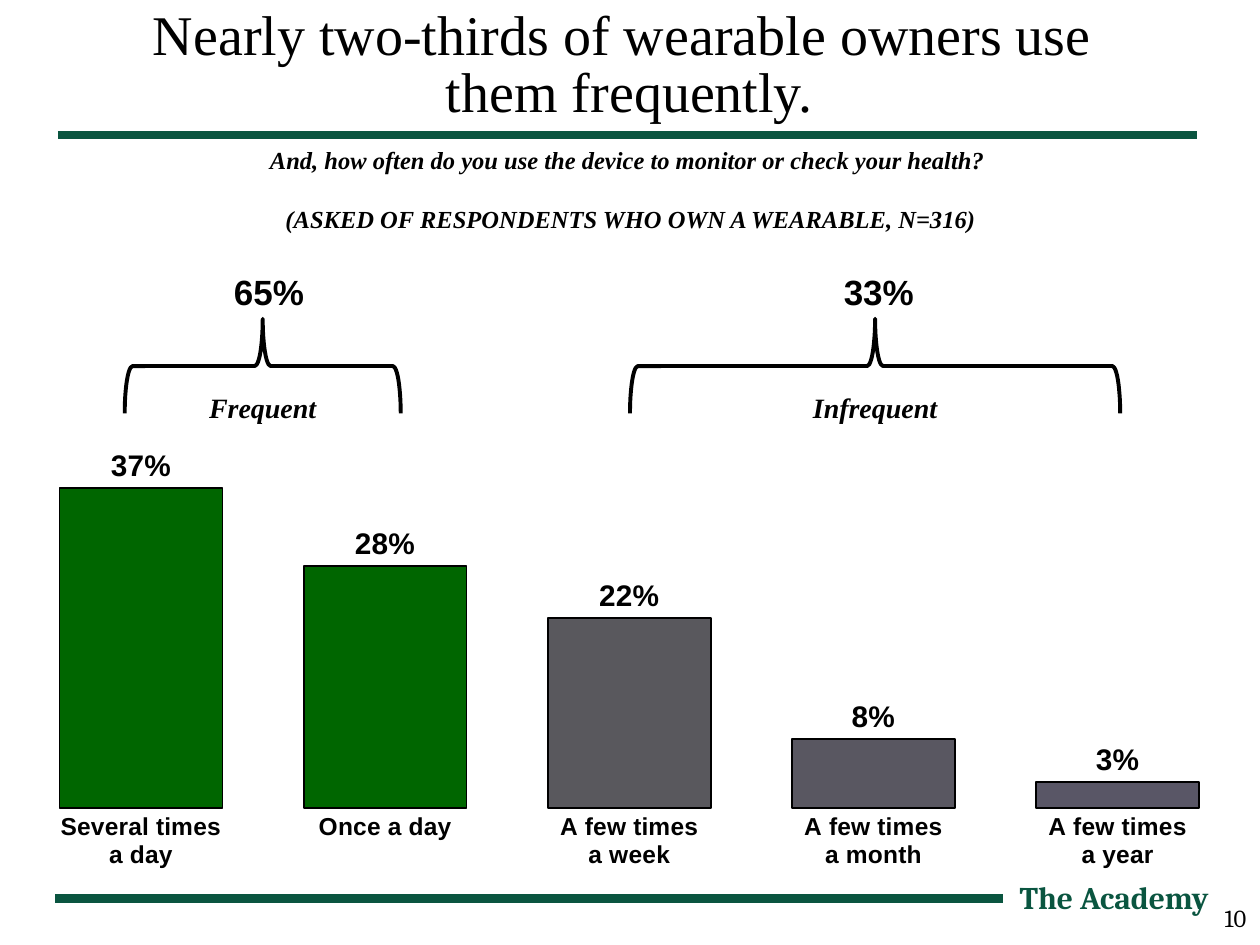
import pptx
import pptx.chart.data
import pptx.dml.color
import pptx.enum.chart
import pptx.enum.shapes
import pptx.enum.text
import pptx.oxml
import pptx.oxml.ns
import pptx.util

PX = 9144  # EMU per px, at 100 px to the inch
RGB = pptx.dml.color.RGBColor
BLACK = RGB(0x00, 0x00, 0x00)
WHITE = RGB(0xFF, 0xFF, 0xFF)
ACADEMY_GREEN = RGB(0x0A, 0x55, 0x40)
FREQUENT_GREEN = RGB(0x00, 0x66, 0x00)
WEEK_GREY = RGB(0x59, 0x58, 0x5D)
MONTH_GREY = RGB(0x59, 0x57, 0x61)
YEAR_GREY = RGB(0x59, 0x56, 0x66)

ALIGN = pptx.enum.text.PP_ALIGN
ANCHOR = pptx.enum.text.MSO_ANCHOR
SHAPE = pptx.enum.shapes.MSO_SHAPE
CHART = pptx.enum.chart

SERIF = "Times New Roman"
QUESTION = {"name": SERIF, "size": 14, "bold": True, "italic": True}
GROUP = {"name": SERIF, "size": 16, "bold": True, "italic": True}
TOTAL = {"name": "Arial", "size": 20, "bold": True}

USAGE = [
    ("Several times\na day", 0.37, FREQUENT_GREEN),
    ("Once a day", 0.28, FREQUENT_GREEN),
    ("A few times\na week", 0.22, WEEK_GREY),
    ("A few times\na month", 0.08, MONTH_GREY),
    ("A few times\na year", 0.03, YEAR_GREY),
]


def emu(*lengths):
    return [pptx.util.Emu(round(length * PX)) for length in lengths]


def set_font(font, formats, color=BLACK):
    for attribute, value in formats.items():
        setattr(font, attribute, pptx.util.Pt(value) if attribute == "size" else value)
    font.color.rgb = color


def write(frame, lines, formats, color=BLACK, align=ALIGN.CENTER, **spacing):
    """Fill a text frame, one paragraph a line, with the spacing after the first."""
    frame.word_wrap = True
    frame.auto_size = pptx.enum.text.MSO_AUTO_SIZE.NONE
    frame.vertical_anchor = ANCHOR.TOP
    for index, line in enumerate(lines):
        paragraph = frame.add_paragraph() if index else frame.paragraphs[0]
        paragraph.alignment = align
        for attribute, value in spacing.items():
            if index or attribute != "space_before":
                setattr(paragraph, attribute, value)
        run = paragraph.add_run()
        run.text = line
        set_font(run.font, formats, color)


def add_text(slide, box, lines, formats, **options):
    write(slide.shapes.add_textbox(*emu(*box)).text_frame, lines, formats, **options)


def add_rule(slide, left, right, y, weight):
    rule = slide.shapes.add_connector(
        pptx.enum.shapes.MSO_CONNECTOR.STRAIGHT, *emu(left, y, right, y))
    rule.line.color.rgb = ACADEMY_GREEN
    rule.line.width = pptx.util.Pt(weight)
    pptx.oxml.ns.qn("a:effectLst")
    rule._element.spPr.append(pptx.oxml.parse_xml(
        "<a:effectLst %s/>" % pptx.oxml.ns.nsdecls("a")))


def add_heading(slide, left, top, width):
    title = slide.shapes.title
    title.left, title.top, title.width, title.height = emu(left, top, width, 56)
    write(title.text_frame,
          ["Nearly two-thirds of wearable owners use ", "them frequently."],
          {"name": SERIF, "size": 32}, line_spacing=0.85)
    add_rule(slide, left + 16, left + 920, top + 104, 4.5)
    add_text(slide, (left + 20, top + 107, 901, 104),
             ["And, how often do you use the device to monitor or check your health? ",
              "(ASKED OF RESPONDENTS WHO OWN A WEARABLE, N=316)"],
             QUESTION, space_before=pptx.util.Pt(17))


def add_usage_chart(slide, box):
    labels, shares, colors = zip(*USAGE)
    chart_data = pptx.chart.data.CategoryChartData(number_format="0%")
    chart_data.categories = labels
    chart_data.add_series("Series 1", shares)
    chart = slide.shapes.add_chart(
        CHART.XL_CHART_TYPE.COLUMN_CLUSTERED, *emu(*box), chart_data).chart
    chart.has_legend = chart.has_title = False
    set_font(chart.font, {"name": "Arial", "size": 18})

    frequency, share = chart.category_axis, chart.value_axis
    for axis in (frequency, share):
        axis.major_tick_mark = axis.minor_tick_mark = CHART.XL_TICK_MARK.NONE
        axis.has_major_gridlines = False
        axis.format.line.fill.background()
    set_font(frequency.tick_labels.font, {"name": "Arial", "size": 14, "bold": True})
    share.tick_label_position = CHART.XL_TICK_LABEL_POSITION.NONE
    share.minimum_scale, share.maximum_scale, share.major_unit = 0, 0.5, 0.1

    plot = chart.plots[0]
    plot.gap_width = 50
    plot.vary_by_categories = False
    plot.has_data_labels = True
    values = plot.data_labels
    values.show_value = True
    values.number_format, values.number_format_is_linked = "0%", False
    values.position = CHART.XL_LABEL_POSITION.OUTSIDE_END
    set_font(values.font, {"name": "Arial", "size": 17, "bold": True})
    for index, color in enumerate(colors):
        bar = plot.series[0].points[index].format
        bar.fill.solid()
        bar.fill.fore_color.rgb = color
        bar.line.color.rgb = BLACK
        bar.line.width = pptx.util.Pt(1)
    place_plot(chart, x=0.015, y=0.236, w=0.969, h=0.622)


def place_plot(chart, **fractions):
    sizes = "".join(f'<c:{side} val="{value}"/>' for side, value in fractions.items())
    layout = pptx.oxml.parse_xml(
        f'<c:layout {pptx.oxml.ns.nsdecls("c")}><c:manualLayout>'
        '<c:layoutTarget val="inner"/><c:xMode val="edge"/><c:yMode val="edge"/>'
        f'{sizes}</c:manualLayout></c:layout>')
    area = chart._chartSpace.chart.plotArea
    for automatic in area.findall(pptx.oxml.ns.qn("c:layout")):
        area.remove(automatic)
    area.insert(0, layout)


def add_group(slide, left, top, width, total, name, total_shift):
    """Brace over a group of bars, with its total above and its name below."""
    center, depth = left + width / 2, 75
    # The brace is turned a quarter, so its box is given before turning.
    brace = slide.shapes.add_shape(SHAPE.LEFT_BRACE, *emu(
        center - depth / 2, top + 43 + (depth - width) / 2, depth, width))
    brace.rotation = 90
    brace.shadow.inherit = False
    brace.fill.background()
    brace.line.color.rgb = BLACK
    brace.line.width = pptx.util.Pt(2.25)
    add_text(slide, (center + total_shift - 67, top, 134, 44), [total], TOTAL)
    add_text(slide, (center - 82, top + 95, 164, 37), [name], GROUP)


def add_footer(slide, left, top, width):
    add_rule(slide, left, left + 752, top + 21, 5)
    add_text(slide, (left + 743, top, 182, 40), ["The Academy"],
             {"name": "Cambria", "size": 18, "bold": True},
             color=ACADEMY_GREEN, align=ALIGN.RIGHT)
    add_text(slide, (left + width - 100, top + 20, 100, 34), ["10"],
             {"name": "Cambria", "size": 14}, align=ALIGN.RIGHT)


def main():
    deck = pptx.Presentation()
    deck.slide_width, deck.slide_height = emu(1000, 750)
    slide = deck.slides.add_slide(deck.slide_layouts.get_by_name("Title Only"))
    slide.background.fill.solid()
    slide.background.fill.fore_color.rgb = WHITE
    add_footer(slide, 44, 692, 955)
    add_usage_chart(slide, (0, 168, 1000, 552))
    add_heading(slide, 30, 3, 939)
    add_group(slide, 99, 210, 219, "65%", "Frequent", 5)
    add_group(slide, 500, 210, 389, "33%", "Infrequent", 3)
    deck.save("out.pptx")


if __name__ == "__main__":
    main()
